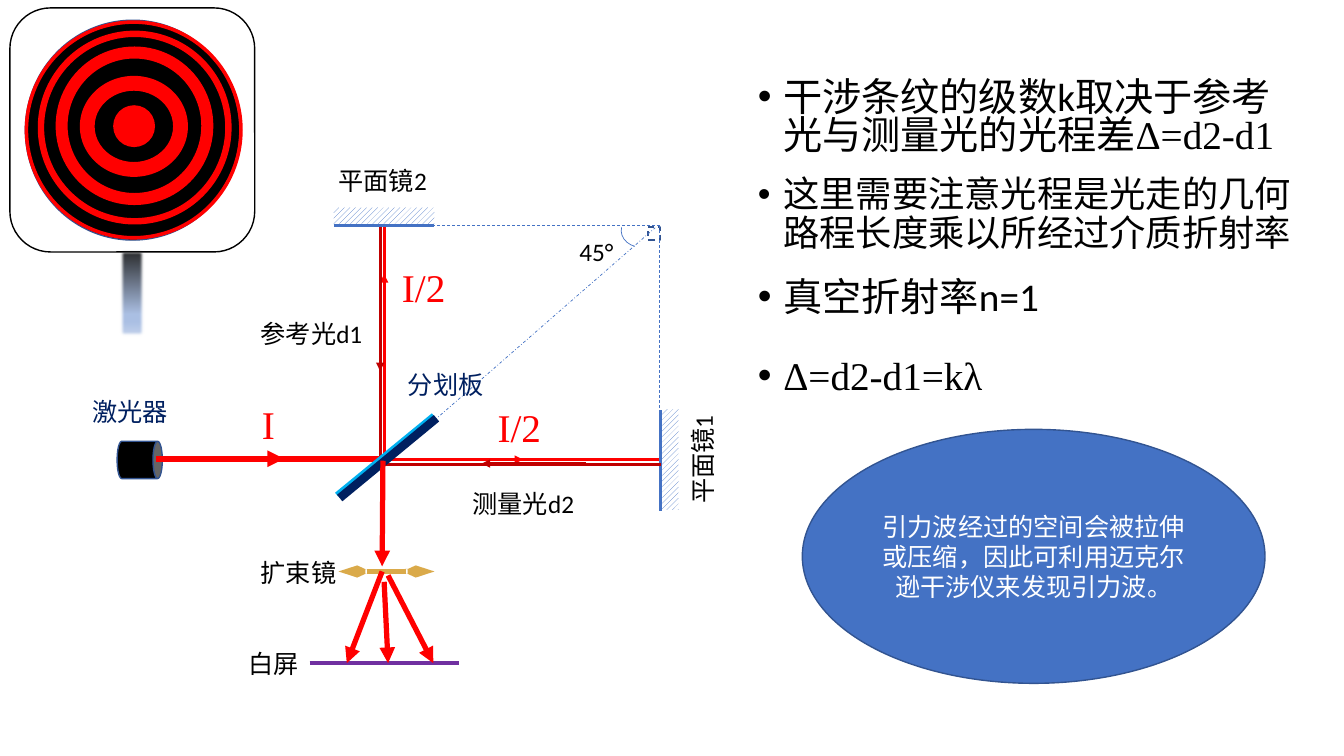
import copy
from dataclasses import dataclass
from typing import Any, Optional

import pptx
import pptx.dml.color
import pptx.enum.dml
import pptx.enum.shapes
import pptx.enum.text
import pptx.oxml
import pptx.oxml.ns
import pptx.util
from lxml import etree

Cm = pptx.util.Cm
Pt = pptx.util.Pt
SHAPE = pptx.enum.shapes.MSO_SHAPE
DASH = pptx.enum.dml.MSO_LINE
qn = pptx.oxml.ns.qn

RED, DARK_RED, BLUE, OUTLINE = "FF0000", "C00000", "4472C4", "325491"
BLACK, NAVY, WHITE = "000000", "002060", "FFFFFF"
SANS, SERIF = "Calibri", "Times New Roman"


@dataclass
class Ray:
    start: tuple[float, float]
    end: tuple[float, float]
    color: str
    width: float
    arrow: bool = False
    dash: Any = None


@dataclass
class Figure:
    kind: Any
    box: tuple[float, float, float, float]
    fill: Optional[str] = None
    line: Optional[str] = None
    width: float = 1
    rotation: float = 0
    thickness: Optional[float] = None
    dash: Any = None


@dataclass
class Label:
    text: str
    left: float
    top: float
    width: float
    color: str = BLACK
    font: str = SANS
    size: float = 18
    rotation: float = 0


@dataclass
class Bullet:
    top: float
    height: float
    spans: list[tuple[str, str]]
    size: float = 28
    spacing: float = 0.9


RAYS = [
    Ray((3.94, 11.56), (9.63, 11.56), RED, 4),
    Ray((5.51, 11.56), (7.16, 11.56), RED, 4, arrow=True),
    Ray((9.68, 9.04), (9.68, 6.91), RED, 2, arrow=True),
    Ray((11.15, 11.58), (13.18, 11.58), RED, 2, arrow=True),
    Ray((8.41, 5.69), (10.95, 5.69), BLUE, 2),
    Ray((16.64, 10.34), (16.64, 12.88), BLUE, 2),
    Ray((7.8, 16.71), (11.56, 16.71), "7030A0", 2.75),
    Ray((9.58, 5.72), (9.58, 11.58), DARK_RED, 2),
    Ray((9.58, 7.16), (9.58, 9.35), DARK_RED, 2, arrow=True),
    Ray((16.66, 11.71), (9.5, 11.71), DARK_RED, 2),
    Ray((14.78, 11.68), (12.14, 11.68), DARK_RED, 2, arrow=True),
    Ray((10.52, 5.69), (16.66, 5.69), BLUE, 0.5, dash=DASH.DASH),
    Ray((16.61, 10.9), (16.61, 5.69), BLUE, 0.5, dash=DASH.DASH),
    Ray((10.95, 10.59), (16.51, 5.74), BLUE, 0.5, dash=DASH.DASH_DOT),
    Ray((8.48, 12.46), (10.92, 10.46), "00B0F0", 3.25),
    Ray((11, 10.54), (8.56, 12.55), NAVY, 6),
    Ray((9.63, 14.4), (8.74, 16.71), RED, 3.75, arrow=True),
    Ray((9.78, 14.5), (10.92, 16.71), RED, 3.75, arrow=True),
    Ray((9.65, 11.61), (9.63, 14.27), RED, 3.75, arrow=True),
    Ray((9.68, 14.66), (9.78, 16.71), RED, 3.75, arrow=True),
]
LENS = Ray((8.53, 14.4), (10.95, 14.4), "D69F32", 3.5)
REFERENCE_BEAM = Ray((9.68, 5.64), (9.68, 11.61), RED, 2)
MEASURING_BEAM = Ray((9.68, 11.58), (16.69, 11.58), RED, 2)

LASER = Figure(SHAPE.CAN, (3.05, 11.02, 0.94, 1.14), BLACK, OUTLINE, rotation=90)
MIRROR_2 = Figure(SHAPE.RECTANGLE, (8.41, 5.23, 2.54, 0.41))
MIRROR_1 = Figure(SHAPE.RECTANGLE, (16.69, 10.31, 0.41, 2.54))
ANGLE_MARKS = [
    Figure(SHAPE.RECTANGLE, (16.33, 5.72, 0.3, 0.33), line=OUTLINE, dash=DASH.DASH),
    Figure(SHAPE.ARC, (15.65, 5.46, 0.89, 0.76), line=BLUE, width=0.5, rotation=194.5),
]
FRINGES = [
    Figure(SHAPE.OVAL, (0.64, 0.51, 5.41, 5.54), BLACK, OUTLINE),
    Figure(SHAPE.ROUNDED_RECTANGLE, (0.25, 0.2, 6.17, 6.15), line=BLACK),
    Figure(SHAPE.DONUT, (0.64, 0.53, 5.46, 5.49), RED, RED, thickness=0.01),
    Figure(SHAPE.DONUT, (0.97, 0.79, 4.85, 4.85), RED, RED, thickness=0.026),
    Figure(SHAPE.DONUT, (1.42, 1.19, 3.94, 3.96), RED, RED, thickness=0.068),
    Figure(SHAPE.DONUT, (2.03, 1.93, 2.69, 2.51), RED, RED, thickness=0.135),
    Figure(SHAPE.OVAL, (2.87, 2.67, 1.02, 1.02), RED, RED),
]
STAND = Figure(SHAPE.RECTANGLE, (3, 6.27, 0.66, 2.21), line="0D0D0D")
STAND_STOPS = [(0, "262626"), (0.74, "ABC0E4"), (0.83, "ABC0E4"), (1, "C7D5ED")]
NOTE = Figure(SHAPE.OVAL, (20.22, 10.82, 11.66, 6.4), BLUE, OUTLINE)
NOTE_TEXT = "引力波经过的空间会被拉伸或压缩，因此可利用迈克尔逊干涉仪来发现引力波。"

LABELS = [
    Label("I", 6.35, 9.96, 0.9, RED, SERIF, 28),
    Label("I/2", 9.88, 6.5, 1.78, RED, SERIF, 28),
    Label("I/2", 12.29, 10.03, 1.78, RED, SERIF, 28),
    Label("分划板", 10.03, 9.17, 2.5, NAVY, SERIF),
    Label("激光器", 2.08, 9.86, 2.5, NAVY, SERIF),
    Label("参考光d1", 6.32, 7.9, 3.1),
    Label("测量光d2", 11.66, 12.19, 3.1),
    Label("白屏", 6.02, 16.21, 1.8),
    Label("平面镜2", 8.28, 4.04, 2.77),
    Label("平面镜1", 16.33, 11.05, 2.77, rotation=270),
    Label("45°", 14.35, 5.82, 1.8),
    Label("扩束镜", 6.32, 13.92, 2.5),
]
BULLETS = [
    Bullet(1.93, 2.29, [("干涉条纹的级数k取决于参考光与测量光的光程差", SANS), ("Δ=d2-d1", SERIF)], spacing=0.8),
    Bullet(4.32, 2.29, [("这里需要注意光程是光走的几何路程长度乘以所经过介质折射率", SANS)], size=25.9),
    Bullet(6.86, 1.4, [("真空折射率n=1", SANS)]),
    Bullet(8.86, 2.29, [("Δ=d2-d1=kλ", SERIF)]),
]


def rgb(color: str) -> Any:
    return pptx.dml.color.RGBColor.from_string(color)


def set_formats(target: Any, formats: dict[str, Any]) -> None:
    for name, value in formats.items():
        setattr(target, name, value)


def add_span(para: Any, text: str, font: str, size: float, color: str) -> None:
    span = para.add_run()
    span.text = text
    set_formats(span.font, {"name": font, "size": Pt(size)})
    span.font.color.rgb = rgb(color)


def draw_ray(shapes: Any, ray: Ray) -> Any:
    straight = pptx.enum.shapes.MSO_CONNECTOR.STRAIGHT
    connector = shapes.add_connector(straight, *map(Cm, ray.start + ray.end))
    connector.line.color.rgb = rgb(ray.color)
    set_formats(connector.line, {"width": Pt(ray.width), "dash_style": ray.dash})
    if ray.arrow:
        etree.SubElement(connector.line._get_or_add_ln(), qn("a:tailEnd"), type="triangle")
    etree.SubElement(connector.element.spPr, qn("a:effectLst"))
    return connector


def draw_lens(shapes: Any) -> None:
    line = draw_ray(shapes, LENS).line._get_or_add_ln()
    etree.SubElement(line.find(".//" + qn("a:srgbClr")), qn("a:alpha"), val="88000")
    for end in ("a:headEnd", "a:tailEnd"):
        etree.SubElement(line, qn(end), type="arrow", w="sm", len="lg")


def draw_figure(shapes: Any, figure: Figure) -> Any:
    shape = shapes.add_shape(figure.kind, *map(Cm, figure.box))
    shape.shadow.inherit = False
    shape.rotation = figure.rotation
    if figure.thickness is not None:
        shape.adjustments[0] = figure.thickness
    for paint, color in ((shape.fill, figure.fill), (shape.line.fill, figure.line)):
        if color is None:
            paint.background()
        else:
            paint.solid()
            paint.fore_color.rgb = rgb(color)
    if figure.line:
        set_formats(shape.line, {"width": Pt(figure.width), "dash_style": figure.dash})
    return shape


def draw_mirror(shapes: Any, figure: Figure) -> Any:
    mirror = draw_figure(shapes, figure)
    mirror.fill.patterned()
    mirror.fill.pattern = pptx.enum.dml.MSO_PATTERN.WIDE_UPWARD_DIAGONAL
    mirror.fill.fore_color.rgb = rgb(BLUE)
    mirror.fill.back_color.rgb = rgb(WHITE)
    return mirror


def draw_stand(shapes: Any) -> None:
    """Draw the soft-edged gradient bar below the fringe screen."""
    stand = draw_figure(shapes, STAND)
    stand.fill.gradient()
    stand.fill.gradient_angle = 270
    stops = stand.element.spPr.find(".//" + qn("a:gsLst"))
    while len(stops) < len(STAND_STOPS):
        stops.append(copy.deepcopy(stops[-1]))
    for stop, (position, color) in zip(stand.fill.gradient_stops, STAND_STOPS):
        stop.position = position
        stop.color.rgb = rgb(color)
    etree.SubElement(stand.element.spPr.find(qn("a:effectLst")), qn("a:softEdge"), rad="31750")


def draw_label(shapes: Any, label: Label) -> None:
    height = 1.02 if label.size == 18 else 1.45
    box = shapes.add_textbox(*map(Cm, (label.left, label.top, label.width, height)))
    box.rotation = label.rotation
    box.text_frame.word_wrap = True
    add_span(box.text_frame.paragraphs[0], label.text, label.font, label.size, label.color)


def draw_bullet(shapes: Any, bullet: Bullet) -> None:
    box = shapes.add_textbox(*map(Cm, (18.85, bullet.top, 14.4, bullet.height)))
    box.text_frame.word_wrap = True
    para = box.text_frame.paragraphs[0]
    set_formats(para, {"line_spacing": bullet.spacing, "space_before": Pt(10)})
    properties = para._p.get_or_add_pPr()
    properties.set("marL", str(Cm(0.64)))
    properties.set("indent", str(-Cm(0.64)))
    etree.SubElement(properties, qn("a:buFont"), typeface="Arial")
    etree.SubElement(properties, qn("a:buChar"), char="•")
    for text, font in bullet.spans:
        add_span(para, text, font, bullet.size, BLACK)


def draw_interferometer(shapes: Any) -> None:
    draw_figure(shapes, LASER)
    mirror_2, mirror_1 = (draw_mirror(shapes, figure) for figure in (MIRROR_2, MIRROR_1))
    draw_ray(shapes, REFERENCE_BEAM).begin_connect(mirror_2, 2)
    draw_ray(shapes, MEASURING_BEAM).end_connect(mirror_1, 1)
    for mark in ANGLE_MARKS:
        draw_figure(shapes, mark)
    draw_lens(shapes)
    for ray in RAYS:
        draw_ray(shapes, ray)
    for label in LABELS:
        draw_label(shapes, label)


def draw_note(shapes: Any) -> None:
    frame = draw_figure(shapes, NOTE).text_frame
    set_formats(frame, {"word_wrap": True, "vertical_anchor": pptx.enum.text.MSO_ANCHOR.MIDDLE})
    para = frame.paragraphs[0]
    para.alignment = pptx.enum.text.PP_ALIGN.CENTER
    add_span(para, NOTE_TEXT, SANS, 18, WHITE)


def main() -> None:
    deck = pptx.Presentation()
    set_formats(deck, {"slide_width": Cm(33.87), "slide_height": Cm(19.05)})
    page = deck.slides.add_slide(deck.slide_layouts[6])
    draw_interferometer(page.shapes.add_group_shape().shapes)
    for bullet in BULLETS:
        draw_bullet(page.shapes, bullet)
    fringe_screen = page.shapes.add_group_shape().shapes
    for figure in FRINGES:
        draw_figure(fringe_screen, figure)
    draw_stand(fringe_screen)
    draw_note(page.shapes)
    deck.save("out.pptx")


if __name__ == "__main__":
    main()
